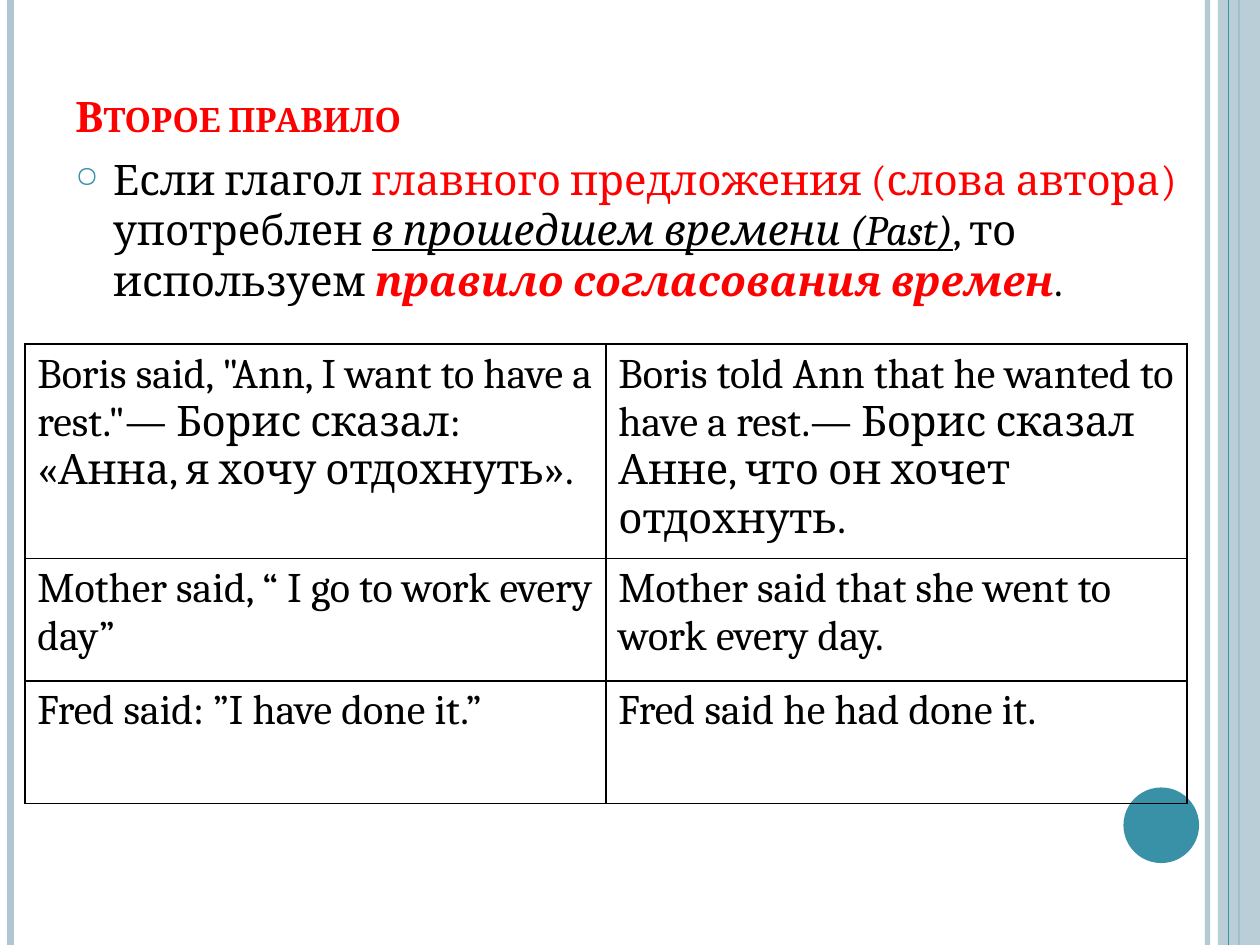
from dataclasses import dataclass

from lxml.etree import SubElement
from pptx import Presentation
from pptx.dml.color import RGBColor
from pptx.enum.shapes import MSO_CONNECTOR, MSO_SHAPE
from pptx.enum.text import MSO_ANCHOR
from pptx.oxml.ns import qn
from pptx.util import Pt


@dataclass(frozen=True)
class Theme:
    font: str = "Cambria"
    size: int = 24
    text: str = "000000"
    accent: str = "FF0000"
    pale: str = "AFC7D0"
    teal: str = "3891A7"


THEME = Theme()
SLIDE_WIDTH, SLIDE_HEIGHT = 720, 540

TITLE = [("Второе правило", {"color": THEME.accent, "bold": True})]
RULE = [
    ("Если глагол ", {}),
    ("главного предложения (слова автора)", {"color": THEME.accent}),
    (" употреблен ", {}),
    ("в прошедшем времени (Past)", {"italic": True, "underline": True}),
    (", то используем ", {}),
    ("правило согласования времен", {"color": THEME.accent, "bold": True, "italic": True}),
    (".", {}),
]
EXAMPLES = [
    (
        'Boris said, "Ann, I want to have a rest."— Борис сказал: «Анна, я хочу отдохнуть».',
        "Boris told Ann that he wanted to have a rest.— Борис сказал Анне, что он хочет отдохнуть.",
    ),
    ("Mother said, “ I go to work every day”", "Mother said that she went to work every day."),
    ("Fred said: ”I have done it.”", "Fred said he had done it."),
]


def add_element(parent, tag, **attributes):
    return SubElement(parent, qn(tag), attributes)


def set_opacity(shape, percent):
    for color in shape._element.spPr.iter(qn("a:srgbClr")):
        add_element(color, "a:alpha", val=str(percent * 1000))


def add_vertical_line(page, x, color, width):
    line = page.shapes.add_connector(MSO_CONNECTOR.STRAIGHT, Pt(x), Pt(0), Pt(x), Pt(SLIDE_HEIGHT))
    line.line.color.rgb = RGBColor.from_string(color)
    line.line.width = Pt(width)
    add_element(line._element.spPr, "a:effectLst")
    return line


def add_plain_shape(page, kind, bounds, color):
    shape = page.shapes.add_shape(kind, *map(Pt, bounds))
    shape.shadow.inherit = False
    shape.fill.solid()
    shape.fill.fore_color.rgb = RGBColor.from_string(color)
    shape.line.fill.background()
    return shape


def add_spans(para, spans):
    for text, formats in spans:
        span = para.add_run()
        span.text = text
        values = {"name": THEME.font, "size": Pt(THEME.size), "color": THEME.text, **formats}
        span.font.color.rgb = RGBColor.from_string(values.pop("color"))
        for name, value in values.items():
            setattr(span.font, name, value)


def add_text(page, bounds, spans, anchor=MSO_ANCHOR.TOP):
    box = page.shapes.add_textbox(*map(Pt, bounds))
    box.text_frame.word_wrap = True
    box.text_frame.vertical_anchor = anchor
    para = box.text_frame.paragraphs[0]
    add_spans(para, spans)
    return para


def add_bullet(para, indent):
    properties = para._p.get_or_add_pPr()
    properties.set("marL", str(Pt(indent)))
    properties.set("indent", str(-Pt(indent)))
    add_element(add_element(properties, "a:buClr"), "a:srgbClr", val=THEME.teal)
    add_element(properties, "a:buSzPct", val="70000")
    add_element(properties, "a:buChar", char="○")


def add_borders(cell, width):
    properties = cell._tc.get_or_add_tcPr()
    for side in ("a:lnL", "a:lnR", "a:lnT", "a:lnB"):
        border = add_element(properties, side, w=str(Pt(width)))
        add_element(add_element(border, "a:solidFill"), "a:srgbClr", val=THEME.text)


def add_examples(page, left, top, column_width, row_heights):
    bounds = left, top, 2 * column_width, sum(row_heights)
    table = page.shapes.add_table(len(EXAMPLES), 2, *map(Pt, bounds)).table
    table.first_row = table.horz_banding = False
    for column in table.columns:
        column.width = Pt(column_width)
    for row, height, texts in zip(table.rows, row_heights, EXAMPLES):
        row.height = Pt(height)
        for cell, text in zip(row.cells, texts):
            add_borders(cell, 1)
            cell.fill.background()
            add_spans(cell.text_frame.paragraphs[0], [(text, {})])


def add_decoration(page):
    set_opacity(add_vertical_line(page, 690, THEME.pale, 3), 93)
    add_vertical_line(page, 6, THEME.pale, 4.5)
    add_vertical_line(page, 708, THEME.teal, 1.5)
    band = add_plain_shape(page, MSO_SHAPE.RECTANGLE, (696, 0, 24, SLIDE_HEIGHT), THEME.pale)
    set_opacity(band, 87)
    add_vertical_line(page, 702, THEME.teal, 0.75)
    add_plain_shape(page, MSO_SHAPE.OVAL, (642, 450, 43.2, 43.2), THEME.teal)


def main():
    deck = Presentation()
    deck.slide_width, deck.slide_height = Pt(SLIDE_WIDTH), Pt(SLIDE_HEIGHT)
    page = deck.slides.add_slide(deck.slide_layouts[6])
    add_decoration(page)
    title = add_text(page, (36, 21.6, 588, 62.4), TITLE, MSO_ANCHOR.BOTTOM)
    title.runs[0].font._element.set("cap", "small")
    rule = add_text(page, (36, 84, 644.4, 425.5), RULE)
    add_bullet(rule, 21.6)
    add_examples(page, 14.2, 196.6, 332, (82, 70, 70))
    deck.save("out.pptx")


if __name__ == "__main__":
    main()
